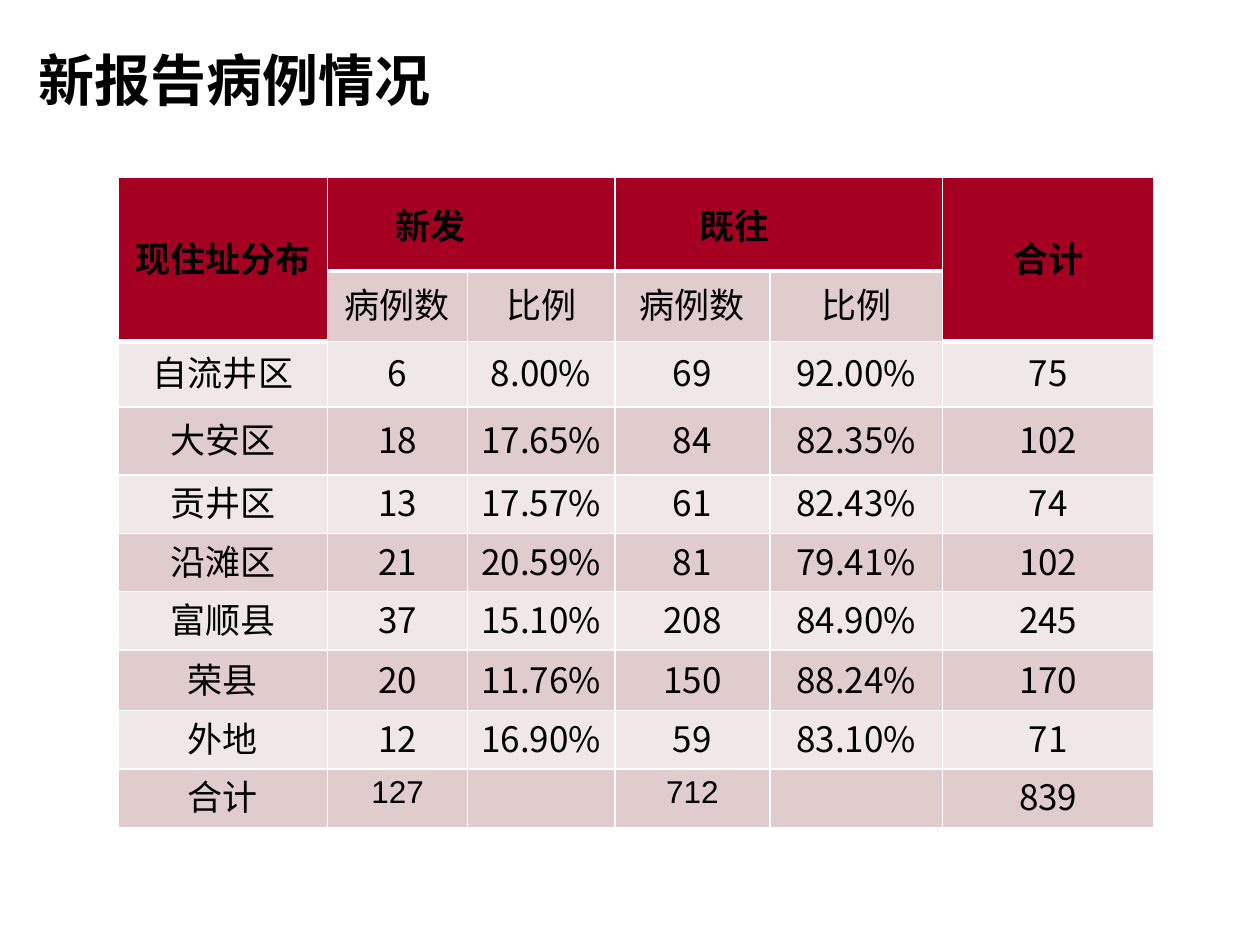
from lxml import etree
from pptx import Presentation, util as u
from pptx.dml.color import RGBColor
from pptx.enum import text as t
from pptx.oxml.ns import qn

# Content
TITLE = "新报告病例情况"
ROWS = [
    ("现住址分布", "新发", "", "既往", "", "合计"),
    ("", "病例数", "比例", "病例数", "比例", ""),
    ("自流井区", "6", "8.00%", "69", "92.00%", "75"),
    ("大安区", "18", "17.65%", "84", "82.35%", "102"),
    ("贡井区", "13", "17.57%", "61", "82.43%", "74"),
    ("沿滩区", "21", "20.59%", "81", "79.41%", "102"),
    ("富顺县", "37", "15.10%", "208", "84.90%", "245"),
    ("荣县", "20", "11.76%", "150", "88.24%", "170"),
    ("外地", "12", "16.90%", "59", "83.10%", "71"),
    ("合计", "127", "", "712", "", "839"),
]
MERGES = [((0, 0), (1, 0)), ((0, 1), (0, 2)), ((0, 3), (0, 4)), ((0, 5), (1, 5))]
GROUP_INDENT = {1: 0.54, 3: 0.67}

# Look and grid
COLORS = {"header": "A50021", "dark": "E1CCCD", "light": "F0E7E8",
          "text": "000000", "line": "FFFFFF"}
LATIN, CJK = "Arial", "Noto Sans CJK SC"
COLUMN_WIDTHS = [1.66, 1.11, 1.17, 1.23, 1.37, 1.68]
ROW_HEIGHTS = [0.74, 0.56, 0.52, 0.54, 0.46, 0.44, 0.45, 0.48, 0.42, 0.42]
LAST_ROW, LAST_COL = len(ROWS) - 1, len(COLUMN_WIDTHS) - 1


def style_text(paragraph, size, bold=False, face=LATIN):
    for run in paragraph.runs:
        run.font.size, run.font.bold, run.font.name = u.Pt(size), bold, face
        run.font.color.rgb = RGBColor.from_string(COLORS["text"])
        east_asian = etree.SubElement(run.font._element, qn("a:ea"))
        east_asian.set("typeface", CJK)


def is_header(row, col):
    return row == 0 or (row == 1 and col in (0, LAST_COL))


def rule_below(row, col):
    return 3 if is_header(row, col) else 1


def set_borders(cell, top, bottom):
    properties = cell._tc.get_or_add_tcPr()
    sides = [("L", 1), ("R", 1), ("T", top), ("B", bottom)]
    for place, (side, points) in enumerate(sides):
        line = etree.Element(qn("a:ln" + side), w=str(u.Pt(points)))
        fill = etree.SubElement(line, qn("a:solidFill"))
        etree.SubElement(fill, qn("a:srgbClr"), val=COLORS["line"])
        properties.insert(place, line)


def set_cell(cell, row, col, wording):
    header = is_header(row, col)
    plain_total = row == LAST_ROW and 0 < col < LAST_COL
    group = row == 0 and col in GROUP_INDENT

    shade = "header" if header else "dark" if row % 2 else "light"
    cell.fill.solid()
    cell.fill.fore_color.rgb = RGBColor.from_string(COLORS[shade])
    set_borders(cell, rule_below(row - 1, col) if row else 1, rule_below(row, col))

    if group:
        cell.margin_left = u.Inches(GROUP_INDENT[col])
    elif not plain_total:
        cell.margin_left = cell.margin_right = cell.margin_top = u.Inches(0.01)
        cell.margin_bottom = u.Inches(0.05)
    if not plain_total:
        cell.vertical_anchor = t.MSO_ANCHOR.MIDDLE

    cell.text_frame.text = wording
    paragraph = cell.text_frame.paragraphs[0]
    paragraph.alignment = t.PP_ALIGN.LEFT if group else t.PP_ALIGN.CENTER
    figure = row > 1 and col > 0 and not plain_total
    style_text(paragraph, 18 if plain_total else 20, header, CJK if figure else LATIN)


def main():
    deck = Presentation()
    deck.slide_width, deck.slide_height = u.Inches(10), u.Inches(7.5)
    slide = deck.slides.add_slide(deck.slide_layouts[6])

    # Case table
    cases = slide.shapes.add_table(
        len(ROWS), len(COLUMN_WIDTHS), u.Inches(0.94), u.Inches(1.41),
        u.Inches(sum(COLUMN_WIDTHS)), u.Inches(sum(ROW_HEIGHTS))).table
    cases.first_row = cases.horz_banding = False
    for column, width in zip(cases.columns, COLUMN_WIDTHS):
        column.width = u.Inches(width)
    for row, height in zip(cases.rows, ROW_HEIGHTS):
        row.height = u.Inches(height)
    for start, end in MERGES:
        cases.cell(*start).merge(cases.cell(*end))
    for row, wordings in enumerate(ROWS):
        for col, wording in enumerate(wordings):
            set_cell(cases.cell(row, col), row, col, wording)

    # Title
    heading = slide.shapes.add_textbox(
        u.Inches(0.21), u.Inches(0.15), u.Inches(4.1), u.Inches(1.03)).text_frame
    heading.word_wrap = True
    heading.vertical_anchor = t.MSO_ANCHOR.MIDDLE
    heading.text = TITLE
    heading.paragraphs[0].line_spacing = 0.9
    style_text(heading.paragraphs[0], 32, bold=True)

    deck.save("out.pptx")


if __name__ == "__main__":
    main()
